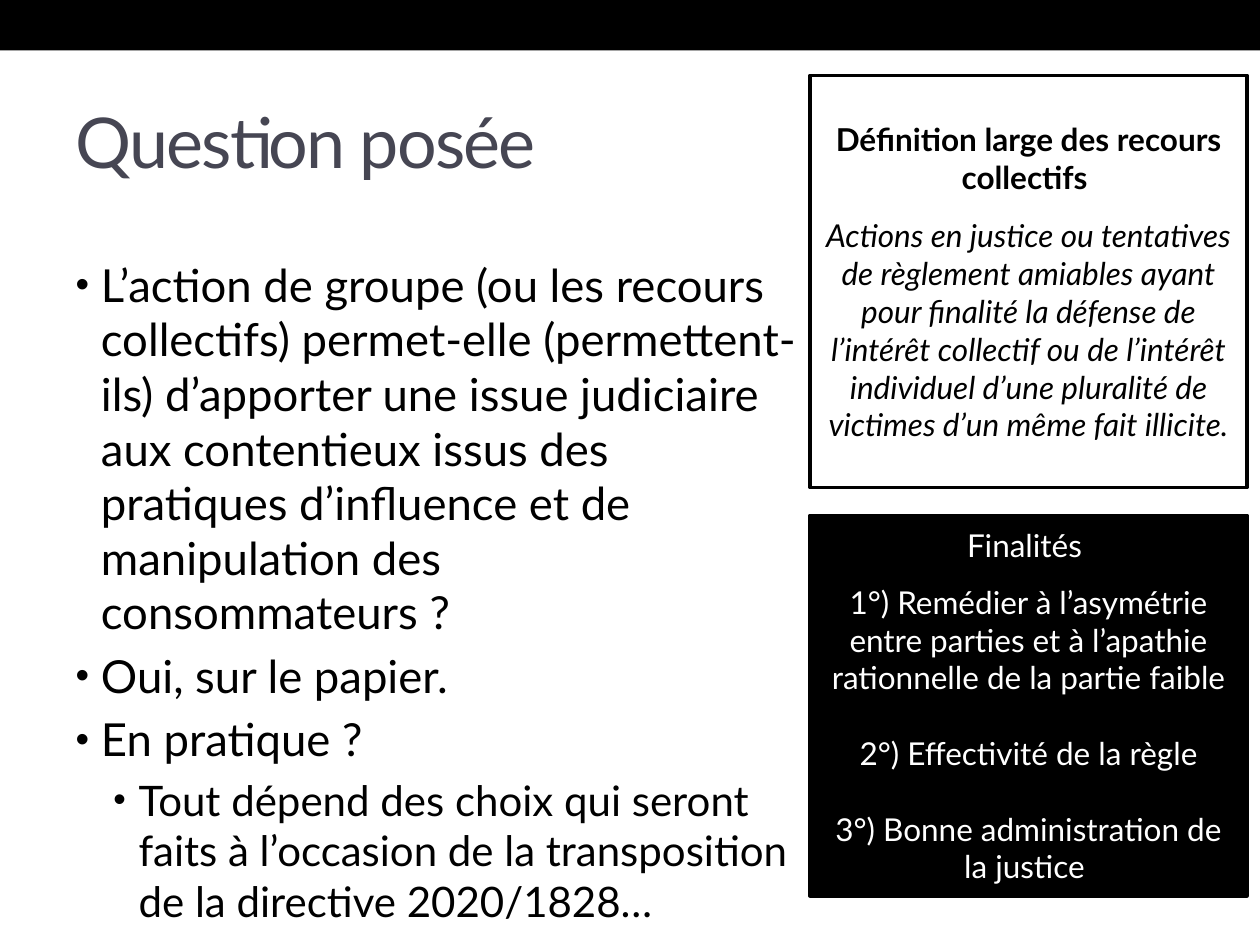
import collections

import lxml.etree
import pptx
import pptx.dml.color
import pptx.enum.shapes
import pptx.enum.text
import pptx.oxml.ns
import pptx.util

Cm = pptx.util.Cm
Pt = pptx.util.Pt
Align = pptx.enum.text.PP_ALIGN
Anchor = pptx.enum.text.MSO_ANCHOR
Box = collections.namedtuple("Box", "left top width height")

BLACK = pptx.dml.color.RGBColor(0x00, 0x00, 0x00)
WHITE = pptx.dml.color.RGBColor(0xFF, 0xFF, 0xFF)
SLATE = pptx.dml.color.RGBColor(0x46, 0x46, 0x53)
FONT = "Lato"

PAGE_WIDTH, PAGE_HEIGHT = 25.4, 19.05
MARGIN = 1.27
PANEL_LEFT, PANEL_WIDTH = 16.33, 8.81

# Level, size, text
POINTS = [
    (0, 26, "L’action de groupe (ou les recours collectifs) permet-elle "
            "(permettent-ils) d’apporter une issue judiciaire aux contentieux "
            "issus des pratiques d’influence et de manipulation des "
            "consommateurs ?"),
    (0, 26, "Oui, sur le papier."),
    (0, 26, "En pratique ?"),
    (1, 24, "Tout dépend des choix qui seront faits à l’occasion de la "
            "transposition de la directive 2020/1828…"),
]

# Space before, bold, italic, text
DEFINITION = [
    (0, True, False, "Définition large des recours collectifs "),
    (12, False, True, "Actions en justice ou tentatives de règlement amiables "
                      "ayant pour finalité la défense de l’intérêt collectif "
                      "ou de l’intérêt individuel d’une pluralité de victimes "
                      "d’un même fait illicite."),
]
AIMS = [
    (0, False, False, "Finalités "),
    (10.8, False, False, "1°) Remédier à l’asymétrie entre parties et à "
                         "l’apathie rationnelle de la partie faible"),
    (21.6, False, False, "2°) Effectivité de la règle"),
    (21.6, False, False, "3°) Bonne administration de la justice "),
]


def place(shape, box):
    shape.left, shape.top = Cm(box.left), Cm(box.top)
    shape.width, shape.height = Cm(box.width), Cm(box.height)


def add_span(para, text, size, color, bold=False, italic=False):
    span = para.add_run()
    span.text = text
    span.font.name = FONT
    span.font.size = Pt(size)
    span.font.color.rgb = color
    span.font.bold = bold
    span.font.italic = italic
    return span


def add_paragraph(frame, index):
    return frame.add_paragraph() if index else frame.paragraphs[0]


def add_bullet(para, indent, hanging):
    props = para._p.get_or_add_pPr()
    props.set("marL", str(Cm(indent)))
    props.set("indent", str(-Cm(hanging)))

    def child(parent, tag, **attributes):
        return lxml.etree.SubElement(parent, pptx.oxml.ns.qn(tag), attributes)

    child(child(props, "a:buClr"), "a:srgbClr", val=str(BLACK))
    child(props, "a:buSzPct", val="85000")
    child(props, "a:buFont", typeface="Arial")
    child(props, "a:buChar", char="•")


def add_rectangle(page, box, fill):
    shape = page.shapes.add_shape(
        pptx.enum.shapes.MSO_SHAPE.RECTANGLE,
        Cm(box.left), Cm(box.top), Cm(box.width), Cm(box.height))
    shape.shadow.inherit = False
    shape.fill.solid()
    shape.fill.fore_color.rgb = fill
    return shape


def build_band(page, box):
    add_rectangle(page, box, BLACK).line.fill.background()


def build_title(page, box):
    title = page.shapes.title
    place(title, box)
    frame = title.text_frame
    frame.auto_size = pptx.enum.text.MSO_AUTO_SIZE.NONE
    frame.vertical_anchor = Anchor.MIDDLE
    para = frame.paragraphs[0]
    para.alignment = Align.LEFT
    span = add_span(para, "Question posée", 40, SLATE)
    span.font._element.set("spc", "-100")


def build_body(page, box):
    body = page.placeholders[1]
    place(body, box)
    frame = body.text_frame
    frame.auto_size = pptx.enum.text.MSO_AUTO_SIZE.NONE
    frame.vertical_anchor = Anchor.TOP
    for index, (level, size, text) in enumerate(POINTS):
        para = add_paragraph(frame, index)
        para.level = level
        para.alignment = Align.LEFT
        para.space_before = Pt(0.2 * size)
        add_bullet(para, indent=0.51 + 0.76 * level, hanging=0.51)
        add_span(para, text, size, BLACK)


def build_panel(page, box, fill, color, entries):
    panel = add_rectangle(page, box, fill)
    panel.line.color.rgb = BLACK
    panel.line.width = Pt(2.08)
    frame = panel.text_frame
    frame.word_wrap = True
    frame.vertical_anchor = Anchor.MIDDLE
    for index, (gap, bold, italic, text) in enumerate(entries):
        para = add_paragraph(frame, index)
        para.alignment = Align.CENTER
        para.space_before = Pt(gap)
        add_span(para, text, 18, color, bold, italic)


def main():
    deck = pptx.Presentation()
    deck.slide_width, deck.slide_height = Cm(PAGE_WIDTH), Cm(PAGE_HEIGHT)
    page = deck.slides.add_slide(deck.slide_layouts[1])

    # Top band, title and question
    build_band(page, Box(0, 0, PAGE_WIDTH, 1.02))
    build_title(page, Box(MARGIN, 1.47, PAGE_WIDTH - 2 * MARGIN, 2.74))
    build_body(page, Box(MARGIN, 5.05, PANEL_LEFT - MARGIN, 13.61))

    # Right-hand panels
    build_panel(page, Box(PANEL_LEFT, 1.52, PANEL_WIDTH, 8.31),
                WHITE, BLACK, DEFINITION)
    build_panel(page, Box(PANEL_LEFT, 10.39, PANEL_WIDTH, 7.67),
                BLACK, WHITE, AIMS)

    deck.save("out.pptx")


if __name__ == "__main__":
    main()
